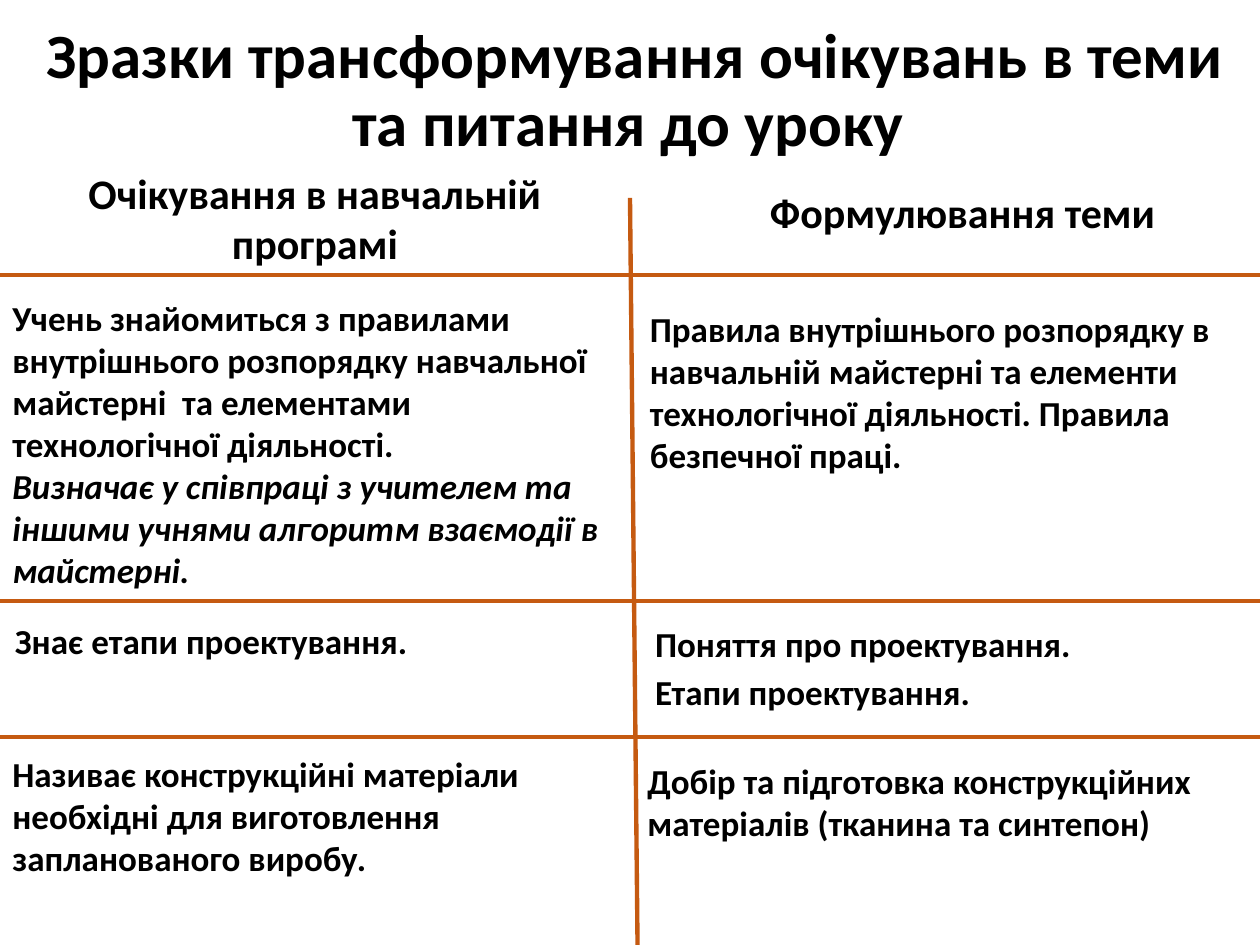
from dataclasses import dataclass

from lxml.etree import SubElement
from pptx import Presentation
from pptx.dml.color import RGBColor
from pptx.enum.shapes import MSO_CONNECTOR as Connector
from pptx.enum.text import MSO_ANCHOR as Anchor, MSO_AUTO_SIZE as AutoSize, PP_ALIGN as Align
from pptx.oxml.ns import qn
from pptx.util import Inches, Pt


@dataclass(frozen=True)
class Theme:
    font: str = "Calibri"
    ink: RGBColor = RGBColor(0, 0, 0)
    rule: RGBColor = RGBColor(0xC5, 0x5A, 0x11)
    title: int = 36
    heading: int = 24
    body: int = 20


class SlideBuilder:
    def __init__(self, page, theme):
        self.page = page
        self.theme = theme

    def fill_para(self, para, text, size, italic=False, align=Align.LEFT, spacing=None):
        para_format = {"alignment": align, "line_spacing": spacing}
        for name, value in para_format.items():
            setattr(para, name, value)
        span = para.add_run()
        span.text = text
        font_format = {"name": self.theme.font, "size": Pt(size), "bold": True, "italic": italic}
        for name, value in font_format.items():
            setattr(span.font, name, value)
        span.font.color.rgb = self.theme.ink

    def title(self, text, left, top, width, height):
        box = self.page.shapes.title
        place = {"left": left, "top": top, "width": width, "height": height}
        for name, value in place.items():
            setattr(box, name, Inches(value))
        frame_format = {"auto_size": AutoSize.NONE, "word_wrap": True, "vertical_anchor": Anchor.MIDDLE}
        for name, value in frame_format.items():
            setattr(box.text_frame, name, value)
        self.fill_para(box.text_frame.paragraphs[0], text, self.theme.title, align=Align.CENTER, spacing=0.9)

    def text(self, place, lines, size, wrap=True, **style):
        box = self.page.shapes.add_textbox(*map(Inches, place))
        frame = box.text_frame
        frame_format = {"word_wrap": wrap, "auto_size": AutoSize.SHAPE_TO_FIT_TEXT}
        for name, value in frame_format.items():
            setattr(frame, name, value)
        for index, (line, italic) in enumerate(lines):
            para = frame.add_paragraph() if index else frame.paragraphs[0]
            self.fill_para(para, line, size, italic, **style)

    def heading(self, place, text):
        self.text(place, [(text, False)], self.theme.heading, align=Align.CENTER)

    def cell(self, place, *lines, **style):
        self.text(place, lines, self.theme.body, **style)

    def line(self, start, end, width):
        rule = self.page.shapes.add_connector(Connector.STRAIGHT, *map(Inches, (*start, *end)))
        rule.line.color.rgb = self.theme.rule
        rule.line.width = Pt(width)
        SubElement(rule._element.spPr, qn("a:effectLst"))


def main():
    deck = Presentation()
    deck.slide_width = Inches(10)
    deck.slide_height = Inches(7.5)
    page = deck.slides.add_slide(deck.slide_layouts[5])
    builder = SlideBuilder(page, Theme())

    builder.title("Зразки трансформування очікувань в теми та питання до уроку ", 0, 0, 10.08, 1.46)
    builder.heading((0, 1.28, 5, 0.91), "Очікування в навчальній програмі")
    builder.heading((5.45, 1.43, 4.38, 0.5), "Формулювання теми")

    builder.line((5, 1.57), (5.06, 7.5), 2.5)
    for row_top in (2.18, 4.77, 5.85):
        builder.line((0, row_top), (10, row_top), 2.25)

    builder.cell(
        (0, 2.3, 5, 2.79),
        ("Учень знайомиться з правилами внутрішнього розпорядку навчальної "
         "майстерні  та елементами технологічної діяльності.", False),
        ("Визначає у співпраці з учителем та іншими учнями алгоритм взаємодії в майстерні.", True),
    )
    builder.cell(
        (5.06, 2.39, 5, 1.45),
        ("Правила внутрішнього розпорядку в навчальній майстерні та елементи "
         "технологічної діяльності. Правила безпечної праці.", False),
    )
    builder.cell((0.02, 4.87, 3.34, 0.44), ("Знає етапи проектування.", False), wrap=False)
    builder.cell(
        (5.1, 4.84, 4.75, 0.88),
        ("Поняття про проектування.", False),
        ("Етапи проектування.", False),
        spacing=1.15,
    )
    builder.cell(
        (0, 5.92, 5, 1.11),
        ("Називає конструкційні матеріали необхідні для виготовлення запланованого виробу.", False),
    )
    builder.cell(
        (5.04, 5.98, 4.96, 0.77),
        ("Добір та підготовка конструкційних матеріалів (тканина та синтепон)", False),
    )
    deck.save("out.pptx")


if __name__ == "__main__":
    main()
